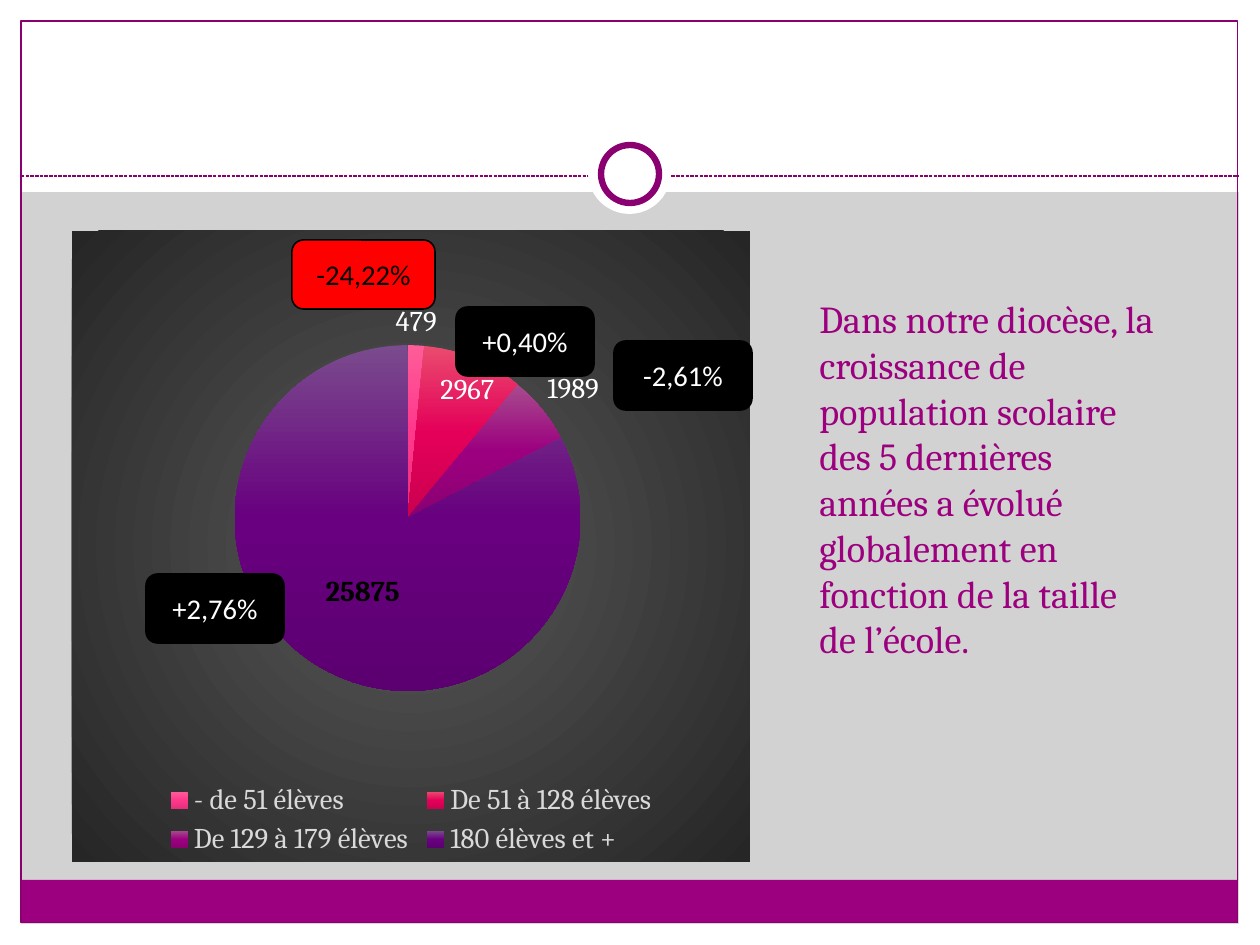
from dataclasses import dataclass

from lxml import etree
from pptx import Presentation
from pptx import util as u
from pptx.chart.data import CategoryChartData
from pptx.dml.color import RGBColor
from pptx.enum import chart as charts
from pptx.enum import dml, shapes, text
from pptx.oxml import parse_xml
from pptx.oxml.ns import nsdecls, qn

PX = 8000  # EMU per px: 1260 by 945 px is 28 by 21 cm
WIDTH, HEIGHT = 1260, 945

WHITE = RGBColor(0xFF, 0xFF, 0xFF)
BLACK = RGBColor(0x00, 0x00, 0x00)
RED = RGBColor(0xFF, 0x00, 0x00)
GREY = RGBColor(0xD2, 0xD2, 0xD2)
LEGEND_GREY = RGBColor(0xD9, 0xD9, 0xD9)
MAGENTA = RGBColor(0x9C, 0x00, 0x7F)
DARK_MAGENTA = RGBColor(0x8A, 0x00, 0x70)

RECT = shapes.MSO_SHAPE.RECTANGLE
OVAL = shapes.MSO_SHAPE.OVAL
ROUNDED = shapes.MSO_SHAPE.ROUNDED_RECTANGLE


@dataclass
class Panel:
    left: int
    top: int
    width: int
    height: int
    fill: RGBColor | None = WHITE
    line: RGBColor | None = None
    line_width: float = 0.75
    kind: shapes.MSO_SHAPE = RECT


@dataclass
class Callout:
    left: int
    top: int
    label: str
    width: int = 138
    fill: RGBColor = BLACK
    color: RGBColor = WHITE


@dataclass
class Slice:
    category: str
    pupils: int
    stops: tuple[str, str, str]


FRAME = [
    Panel(0, 924, WIDTH, 21),
    Panel(0, 0, WIDTH, 192),
    Panel(0, 0, 21, HEIGHT),
    Panel(1239, 0, 21, HEIGHT),
    Panel(21, 880, 1217, 43, fill=MAGENTA),
    Panel(21, 21, 1217, 902, fill=None, line=DARK_MAGENTA),
]
RINGS = [
    Panel(588, 131, 83, 83, kind=OVAL),
    Panel(601, 145, 58, 58, line=DARK_MAGENTA, line_width=4, kind=OVAL),
]
SLICES = [
    Slice("- de 51 élèves", 479, ("FF5C99", "FF388C", "E52F7C")),
    Slice("De 51 à 128 élèves", 2967, ("EA4B6F", "E40059", "CB004F")),
    Slice("De 129 à 179 élèves", 1989, ("A74B8D", "9C007F", "8B0071")),
    Slice("180 élèves et +", 25875, ("7A4B8D", "68007F", "5C0071")),
]
CALLOUTS = [
    Callout(146, 574, "+2,76%"),
    Callout(456, 307, "+0,40%"),
    Callout(292, 240, "-24,22%", width=143, fill=RED, color=BLACK),
    Callout(614, 341, "-2,61%"),
]
COMMENT = (
    "Dans notre diocèse, la croissance de population scolaire des 5 dernières "
    "années a évolué globalement en fonction de la taille de l’école."
)
PLOT_LAYOUT = {"x": 0.24, "y": 0.18, "w": 0.51, "h": 0.55}


def px(*lengths: int) -> list[int]:
    return [length * PX for length in lengths]


def set_font(font, color: RGBColor, **values) -> None:
    for name, value in values.items():
        setattr(font, name, value)
    font.color.rgb = color


def gradient(stops: tuple[str, ...], direction: str):
    """Return a gradFill element with evenly spaced stops."""
    step = 100000 // (len(stops) - 1)
    marks = "".join(
        f'<a:gs pos="{index * step}"><a:srgbClr val="{color}"/></a:gs>'
        for index, color in enumerate(stops)
    )
    return parse_xml(
        f'<a:gradFill {nsdecls("a")}><a:gsLst>{marks}</a:gsLst>{direction}</a:gradFill>'
    )


def add_panel(slide, panel: Panel):
    shape = slide.shapes.add_shape(
        panel.kind, *px(panel.left, panel.top, panel.width, panel.height)
    )
    shape.shadow.inherit = False
    if panel.fill is None:
        shape.fill.background()
    else:
        shape.fill.solid()
        shape.fill.fore_color.rgb = panel.fill
    if panel.line is None:
        shape.line.fill.background()
    else:
        shape.line.color.rgb = panel.line
        shape.line.width = u.Pt(panel.line_width)
    return shape


def add_divider(slide) -> None:
    line = slide.shapes.add_connector(
        shapes.MSO_CONNECTOR.STRAIGHT, *px(21, 176, 1238, 176)
    )
    line.line.color.rgb = DARK_MAGENTA
    line.line.width = u.Pt(0.75)
    line.line.dash_style = dml.MSO_LINE.SQUARE_DOT
    etree.SubElement(line._element.spPr, qn("a:effectLst"))


def add_callout(slide, callout: Callout) -> None:
    shape = add_panel(slide, Panel(
        callout.left, callout.top, callout.width, 69,
        fill=callout.fill, line=BLACK, line_width=1, kind=ROUNDED,
    ))
    shape.text_frame.vertical_anchor = text.MSO_ANCHOR.MIDDLE
    paragraph = shape.text_frame.paragraphs[0]
    paragraph.text = callout.label
    paragraph.alignment = text.PP_ALIGN.CENTER
    set_font(paragraph.font, callout.color, size=u.Pt(18), name="Calibri")


def style_chart_area(chart) -> None:
    """Give the chart its radial background and the pie its fixed place."""
    area = parse_xml(f'<c:spPr {nsdecls("c", "a")}/>')
    area.append(gradient(
        ("595959", "262626"),
        '<a:path path="circle"><a:fillToRect l="50000" t="50000" r="50000" b="50000"/></a:path>',
    ))
    etree.SubElement(etree.SubElement(area, qn("a:ln")), qn("a:noFill"))
    chart._chartSpace.find(qn("c:chart")).addnext(area)

    plot_area = chart._chartSpace.find(f'{qn("c:chart")}/{qn("c:plotArea")}')
    for layout in plot_area.findall(qn("c:layout")):
        plot_area.remove(layout)
    modes = '<c:layoutTarget val="inner"/><c:xMode val="edge"/><c:yMode val="edge"/>'
    sizes = "".join(f'<c:{key} val="{value}"/>' for key, value in PLOT_LAYOUT.items())
    plot_area.insert(0, parse_xml(
        f'<c:layout {nsdecls("c")}><c:manualLayout>{modes}{sizes}</c:manualLayout></c:layout>'
    ))


def add_pie(slide) -> None:
    data = CategoryChartData()
    data.categories = [part.category for part in SLICES]
    data.add_series("Series 1", [part.pupils for part in SLICES])
    chart = slide.shapes.add_chart(
        charts.XL_CHART_TYPE.PIE, *px(72, 231, 678, 631), data
    ).chart
    style_chart_area(chart)
    set_font(chart.font, BLACK, size=u.Pt(10), name="Cambria")
    chart.has_title = False
    chart.has_legend = True
    chart.legend.position = charts.XL_LEGEND_POSITION.BOTTOM
    chart.legend.include_in_layout = False
    set_font(chart.legend.font, LEGEND_GREY, size=u.Pt(18), name="Cambria")

    plot = chart.plots[0]
    plot.vary_by_categories = True
    series = plot.series[0]
    for index, part in enumerate(SLICES):
        point = series._element.get_or_add_dPt_for_point(index)
        point.get_or_add_spPr().append(
            gradient(part.stops, '<a:lin ang="5400000" scaled="0"/>')
        )

    labels = series.data_labels
    labels.show_value = True
    labels.position = charts.XL_LABEL_POSITION.BEST_FIT
    set_font(labels.font, WHITE, size=u.Pt(18), name="Cambria")
    largest = series.points[len(SLICES) - 1].data_label
    set_font(largest.font, BLACK, size=u.Pt(18), name="Cambria", bold=True)
    largest.position = charts.XL_LABEL_POSITION.CENTER


def add_comment(slide) -> None:
    box = slide.shapes.add_textbox(*px(808, 290, 365, 381))
    box.text_frame.word_wrap = True
    paragraph = box.text_frame.paragraphs[0]
    paragraph.text = COMMENT
    set_font(paragraph.font, MAGENTA, size=u.Pt(24), name="Cambria")


def main() -> None:
    presentation = Presentation()
    presentation.slide_width, presentation.slide_height = px(WIDTH, HEIGHT)
    slide = presentation.slides.add_slide(presentation.slide_layouts[6])
    slide.background.fill.solid()
    slide.background.fill.fore_color.rgb = GREY
    for panel in FRAME:
        add_panel(slide, panel)
    add_divider(slide)
    for ring in RINGS:
        add_panel(slide, ring)
    add_pie(slide)
    for callout in CALLOUTS:
        add_callout(slide, callout)
    add_comment(slide)
    presentation.save("out.pptx")


if __name__ == "__main__":
    main()
